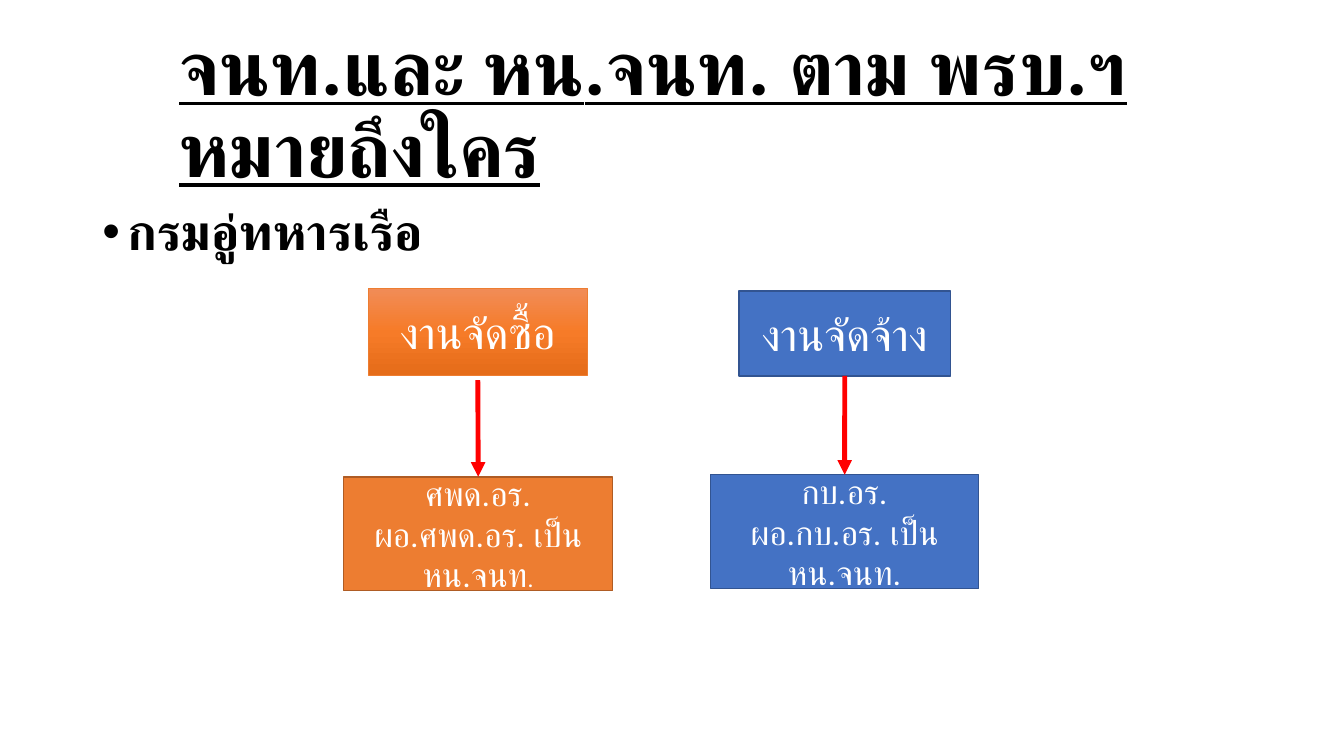
import pptx
import pptx.util
import pptx.dml.color
import pptx.enum.shapes
import pptx.enum.text
import pptx.oxml
import pptx.oxml.ns
from lxml import etree

Pt = pptx.util.Pt
RGB = pptx.dml.color.RGBColor
ANCHOR = pptx.enum.text.MSO_ANCHOR
FONT = "Roboto"

BLACK = RGB(0x00, 0x00, 0x00)
WHITE = RGB(0xFF, 0xFF, 0xFF)
RED = RGB(0xFF, 0x00, 0x00)
ORANGE = RGB(0xED, 0x7D, 0x31)
DARK_ORANGE = RGB(0xAF, 0x5C, 0x24)
BLUE = RGB(0x44, 0x72, 0xC4)
DARK_BLUE = RGB(0x32, 0x54, 0x91)
ORANGE_GRADIENT = [(0, RGB(0xF1, 0x8C, 0x57)), (50, RGB(0xF6, 0x7B, 0x28)),
                   (100, RGB(0xE5, 0x6C, 0x19))]

TITLE = "จนท.และ หน.จนท. ตาม พรบ.ฯ หมายถึงใคร"
DEPARTMENT = "กรมอู่ทหารเรือ"

# Each paragraph is a list of (text, size); boxes are left, top, width, height.
TRACKS = [
    {"task": [[("งานจัดซื้อ", 32)]], "task_box": (262.8, 206, 157, 62),
     "task_fill": ORANGE_GRADIENT, "task_line": (ORANGE, 0.5),
     "unit": [[("ศพด.อร.", 24)], [("ผอ.ศพด.อร. เป็น หน.จนท", 24), (".", 18)]],
     "unit_box": (245.5, 340.6, 192.2, 81.4),
     "unit_fill": ORANGE, "unit_line": (DARK_ORANGE, 1), "arrow_gap": 3.5},
    {"task": [[("งานจัดจ้าง", 32)]], "task_box": (527.8, 208, 151.2, 60.5),
     "task_fill": BLUE, "task_line": (DARK_BLUE, 1),
     "unit": [[("กบ.อร.", 24)], [("ผอ.กบ.อร. เป็น หน.จนท.", 24)]],
     "unit_box": (507.6, 339.1, 191.5, 81.4),
     "unit_fill": BLUE, "unit_line": (DARK_BLUE, 1), "arrow_gap": 0},
]


def add_xml(parent, tag, **attributes):
    return etree.SubElement(parent, pptx.oxml.ns.qn(tag), attributes)


def style_run(run, size, color, bold=False, underline=False):
    """Format a run, naming the font for Thai script as well as Latin."""
    run.font.size = Pt(size)
    run.font.name = FONT
    run.font.color.rgb = color
    run.font.bold = bold
    run.font.underline = underline
    add_xml(run.font._element, "a:cs", typeface=FONT)


def add_heading(slide, text, box, size, anchor, underline=False):
    frame = slide.shapes.add_textbox(*map(Pt, box)).text_frame
    frame.word_wrap = True
    frame.vertical_anchor = anchor
    frame.text = text
    paragraph = frame.paragraphs[0]
    paragraph.line_spacing = 0.9
    style_run(paragraph.runs[0], size, BLACK, bold=True, underline=underline)
    return paragraph


def add_bullet(paragraph, indent):
    properties = paragraph._p.get_or_add_pPr()
    properties.set("marL", str(Pt(indent)))
    properties.set("indent", str(-Pt(indent)))
    add_xml(properties, "a:buFont", typeface="Arial")
    add_xml(properties, "a:buChar", char="•")


def fill_gradient(shape, stops):
    """Apply a top-to-bottom gradient with any number of stops."""
    shape.fill.gradient()
    shape.fill.gradient_angle = 270
    stop_list = shape._element.spPr.find(".//" + pptx.oxml.ns.qn("a:gsLst"))
    for old_stop in list(stop_list):
        stop_list.remove(old_stop)
    for percent, color in stops:
        stop = add_xml(stop_list, "a:gs", pos=str(percent * 1000))
        add_xml(stop, "a:srgbClr", val=str(color))


def add_box(slide, paragraphs, box, fill, outline):
    shape = slide.shapes.add_shape(
        pptx.enum.shapes.MSO_SHAPE.RECTANGLE, *map(Pt, box))
    shape.shadow.inherit = False
    if isinstance(fill, list):
        fill_gradient(shape, fill)
    else:
        shape.fill.solid()
        shape.fill.fore_color.rgb = fill
    shape.line.color.rgb = outline[0]
    shape.line.width = Pt(outline[1])
    frame = shape.text_frame
    frame.word_wrap = True
    frame.vertical_anchor = ANCHOR.MIDDLE
    for index, pieces in enumerate(paragraphs):
        paragraph = frame.add_paragraph() if index else frame.paragraphs[0]
        paragraph.alignment = pptx.enum.text.PP_ALIGN.CENTER
        for text, size in pieces:
            run = paragraph.add_run()
            run.text = text
            style_run(run, size, WHITE)
    return shape


def add_arrow(slide, task, unit, gap):
    """Point from a task down to its unit, leaving a gap below the task."""
    start_x = task.left + task.width // 2
    start_y = task.top + task.height + Pt(gap)
    arrow = slide.shapes.add_connector(
        pptx.enum.shapes.MSO_CONNECTOR.STRAIGHT,
        start_x, start_y, unit.left + unit.width // 2, unit.top)
    if not gap:
        arrow.begin_connect(task, 2)
    arrow.end_connect(unit, 0)
    arrow.line.color.rgb = RED
    arrow.line.width = Pt(3.5)
    add_xml(arrow.line._get_or_add_ln(), "a:tailEnd", type="triangle")
    add_xml(arrow._element.spPr, "a:effectLst")


def main():
    deck = pptx.Presentation()
    deck.slide_width, deck.slide_height = Pt(960), Pt(540)
    slide = deck.slides.add_slide(deck.slide_layouts[6])

    add_heading(slide, TITLE, (121, 28, 728, 104.4), 54, ANCHOR.MIDDLE,
                underline=True)
    department = add_heading(slide, DEPARTMENT, (66, 144, 828, 342.7), 36,
                             ANCHOR.TOP)
    add_bullet(department, 18)

    for track in TRACKS:
        task = add_box(slide, track["task"], track["task_box"],
                       track["task_fill"], track["task_line"])
        unit = add_box(slide, track["unit"], track["unit_box"],
                       track["unit_fill"], track["unit_line"])
        add_arrow(slide, task, unit, track["arrow_gap"])

    deck.save("out.pptx")


if __name__ == "__main__":
    main()
